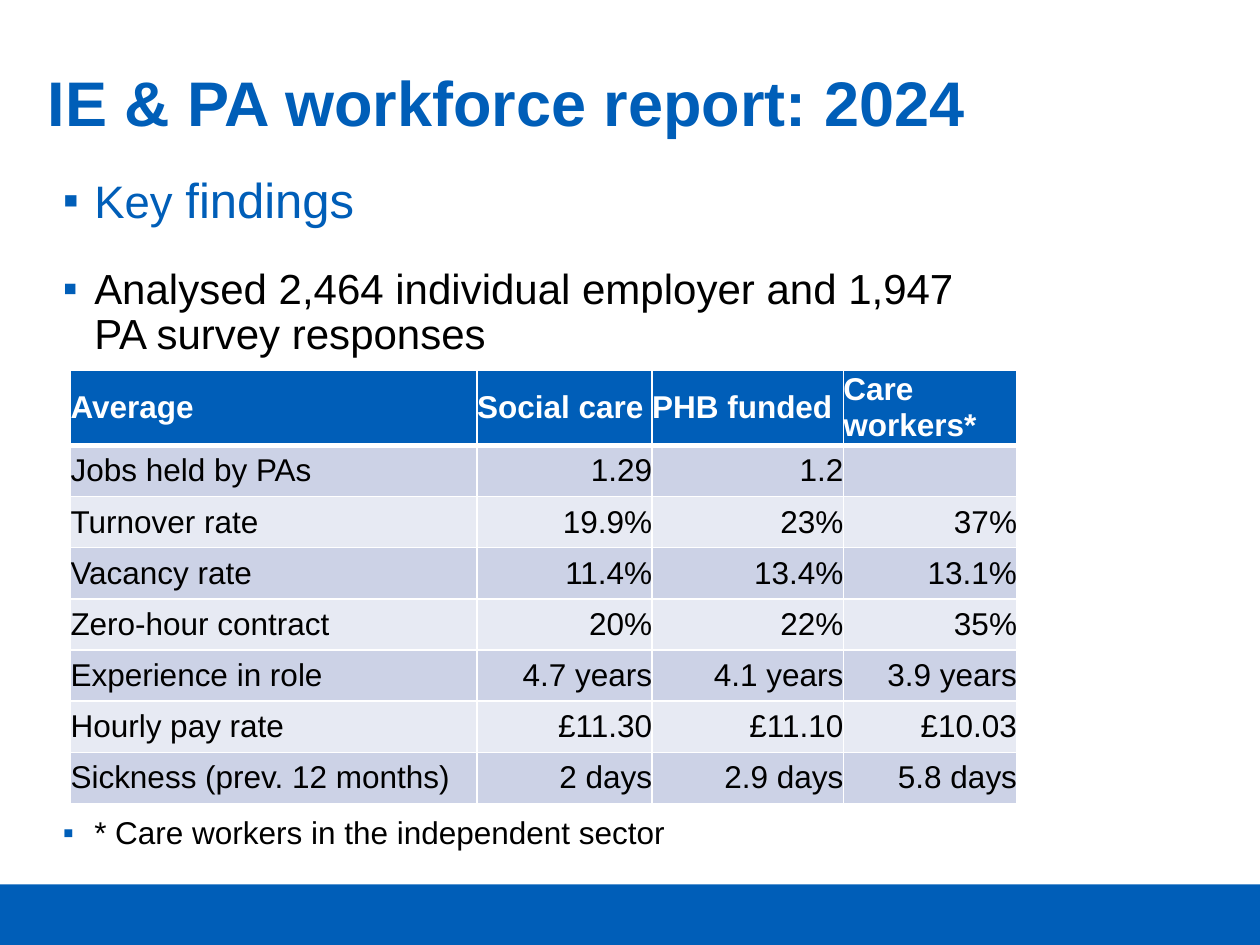
"""Build the 2024 IE & PA workforce report slide with its key findings table."""
from lxml import etree
from pptx import Presentation
from pptx.dml.color import RGBColor
from pptx.enum import shapes, text
from pptx.oxml.ns import qn
from pptx.util import Pt

THEME = {
    "font": "Arial", "blue": "005EB8", "black": "000000", "white": "FFFFFF",
    "bands": ("CCD2E6", "E7EAF3"),
    "title": 36, "lead": 26, "lead_big": 28, "body": 24, "small": 18,
}
BLUE, BLACK, WHITE = THEME["blue"], THEME["black"], THEME["white"]

TITLE = [{"runs": [("IE & PA workforce report: 2024", THEME["title"], BLUE, True)]}]
LEAD = [{"bullet": True, "runs": [("Key ", THEME["lead"], BLUE, False),
                                  ("findings", THEME["lead_big"], BLUE, False)]}]
BODY = [
    {"bullet": True, "runs": [
        ("Analysed 2,464 individual employer and 1,947 PA survey responses",
         THEME["body"], BLACK, False)]},
    {"bullet": True, "before": 262, "runs": [
        ("* Care workers in the independent sector", THEME["small"], BLACK, False)]},
]
BOXES = [
    ((20.2, 35.3, 657.4, 50.4), text.MSO_ANCHOR.MIDDLE, TITLE),
    ((28.8, 149.8, 550.1, 355), text.MSO_ANCHOR.TOP, BODY),
    ((28.8, 97.2, 568.8, 43.2), text.MSO_ANCHOR.TOP, LEAD),
]
FOOTER = (0, 505.4, 720, 34.6)

ROWS = [
    ("Average", "Social care", "PHB funded", "Care workers*"),
    ("Jobs held by PAs", "1.29", "1.2", ""),
    ("Turnover rate", "19.9%", "23%", "37%"),
    ("Vacancy rate", "11.4%", "13.4%", "13.1%"),
    ("Zero-hour contract", "20%", "22%", "35%"),
    ("Experience in role", "4.7 years", "4.1 years", "3.9 years"),
    ("Hourly pay rate", "£11.30", "£11.10", "£10.03"),
    ("Sickness (prev. 12 months)", "2 days", "2.9 days", "5.8 days"),
]
TABLE_AT = (40.3, 211.3)
COLUMNS = (232.4, 100, 109.3, 99.2)
HEADER_HEIGHT, ROW_HEIGHT = 39, 29.25


def pts(values):
    return [Pt(v) for v in values]


def apply(obj, values):
    for name, value in values.items():
        setattr(obj, name, value)


def add_run(p, words, size, color, bold):
    r = p.add_run()
    r.text = words
    apply(r.font, {"name": THEME["font"], "size": Pt(size), "bold": bold})
    r.font.color.rgb = RGBColor.from_string(color)


def add_bullet(p):
    pPr = p._p.get_or_add_pPr()
    pPr.set("marL", str(Pt(18)))
    pPr.set("indent", str(-Pt(18)))
    color = etree.SubElement(pPr, qn("a:buClr"))
    etree.SubElement(color, qn("a:srgbClr"), val=BLUE)
    etree.SubElement(pPr, qn("a:buFont"), typeface=THEME["font"])
    etree.SubElement(pPr, qn("a:buChar"), char="▪")


def add_text(slide, at, anchor, paragraphs):
    tf = slide.shapes.add_textbox(*pts(at)).text_frame
    apply(tf, {"word_wrap": True, "vertical_anchor": anchor})
    for i, item in enumerate(paragraphs):
        p = tf.add_paragraph() if i else tf.paragraphs[0]
        if item.get("bullet"):
            add_bullet(p)
        apply(p, {"line_spacing": 0.9, "space_before": Pt(item.get("before", 0))})
        for run in item["runs"]:
            add_run(p, *run)


def set_borders(cell, widths):
    tcPr = cell._tc.get_or_add_tcPr()
    for i, (side, width) in enumerate(widths.items()):
        line = etree.Element(qn(f"a:ln{side}"), w=str(Pt(width)))
        fill = etree.SubElement(line, qn("a:solidFill"))
        etree.SubElement(fill, qn("a:srgbClr"), val=WHITE)
        tcPr.insert(i, line)


def add_table(slide):
    heights = [HEADER_HEIGHT] + [ROW_HEIGHT] * (len(ROWS) - 1)
    size = (sum(COLUMNS), sum(heights))
    table = slide.shapes.add_table(len(ROWS), len(COLUMNS), *pts(TABLE_AT + size)).table
    for column, width in zip(table.columns, COLUMNS):
        column.width = Pt(width)
    for i, (row, height) in enumerate(zip(ROWS, heights)):
        table.rows[i].height = Pt(height)
        header = i == 0
        fill = BLUE if header else THEME["bands"][(i - 1) % 2]
        for j, words in enumerate(row):
            cell = table.cell(i, j)
            apply(cell, {"margin_left": 0, "margin_right": 0, "margin_top": 0,
                         "margin_bottom": 0, "vertical_anchor": text.MSO_ANCHOR.MIDDLE})
            cell.fill.solid()
            cell.fill.fore_color.rgb = RGBColor.from_string(fill)
            set_borders(cell, {"L": 1, "R": 1, "T": 3 if i == 1 else 1,
                               "B": 3 if header else 1})
            p = cell.text_frame.paragraphs[0]
            right = j and not header
            p.alignment = text.PP_ALIGN.RIGHT if right else text.PP_ALIGN.LEFT
            if words:
                add_run(p, words, THEME["small"], WHITE if header else BLACK, header)


def main():
    prs = Presentation()
    apply(prs, {"slide_width": Pt(720), "slide_height": Pt(540)})
    slide = prs.slides.add_slide(prs.slide_layouts[6])
    sp = slide.shapes.add_shape(shapes.MSO_SHAPE.RECTANGLE, *pts(FOOTER))
    sp.shadow.inherit = False
    sp.fill.solid()
    sp.fill.fore_color.rgb = RGBColor.from_string(BLUE)
    sp.line.fill.background()
    for box in BOXES:
        add_text(slide, *box)
    add_table(slide)
    prs.save("out.pptx")


if __name__ == "__main__":
    main()
